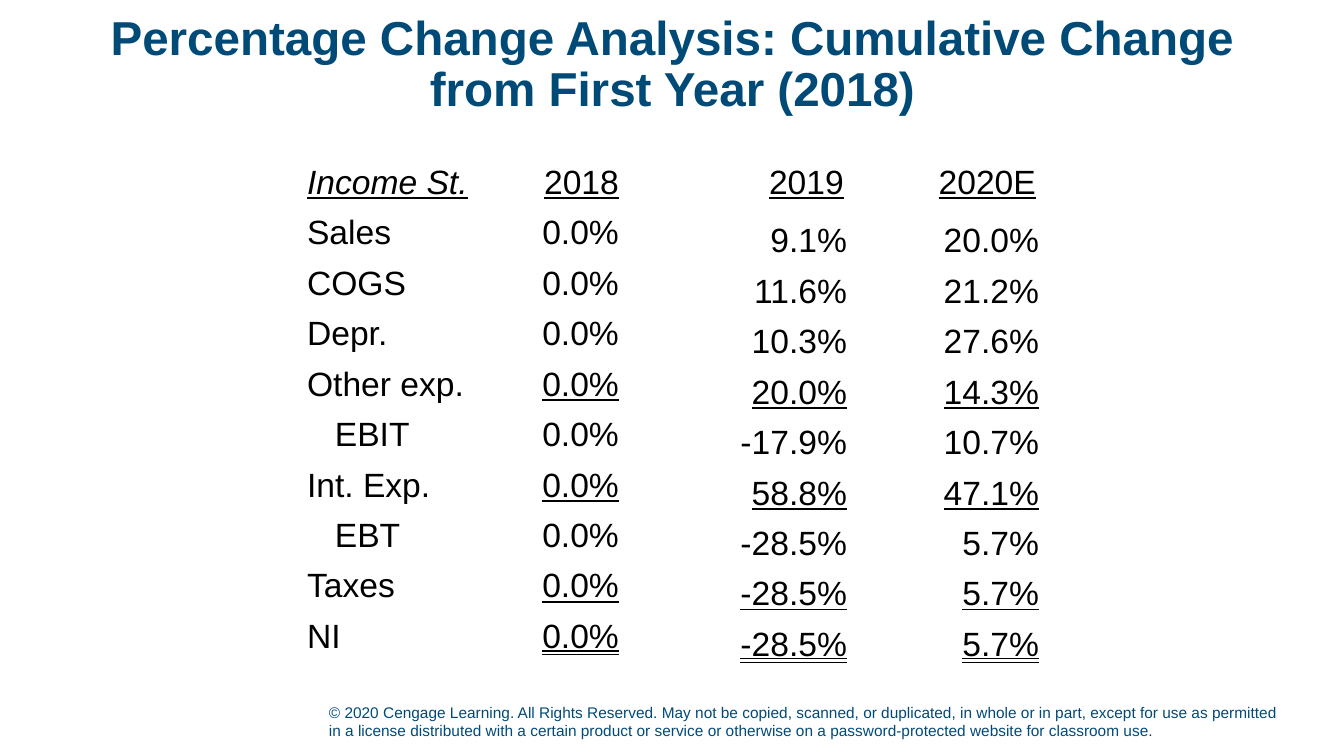
from pptx import Presentation
from pptx.dml.color import RGBColor
from pptx.enum.text import MSO_ANCHOR, MSO_UNDERLINE, PP_ALIGN
from pptx.util import Pt

LEFT, CENTER, RIGHT = PP_ALIGN.LEFT, PP_ALIGN.CENTER, PP_ALIGN.RIGHT
TOP, MIDDLE, BOTTOM = MSO_ANCHOR.TOP, MSO_ANCHOR.MIDDLE, MSO_ANCHOR.BOTTOM
NONE = MSO_UNDERLINE.NONE
SINGLE = MSO_UNDERLINE.SINGLE_LINE
DOUBLE = MSO_UNDERLINE.DOUBLE_LINE

COLORS = {"navy": "004A78", "text": "000000"}
FORMATS = {
    "title": {"size": Pt(34), "bold": True, "name": "Arial"},
    "footer": {"size": Pt(11), "bold": False, "name": "Arial"},
    "cell": {"size": Pt(24), "bold": False, "name": "Arial"},
}

TITLE = "Percentage Change Analysis: Cumulative Change from First Year (2018)"
COPYRIGHT = (
    "© 2020 Cengage Learning. All Rights Reserved. May not be copied, scanned, "
    "or duplicated, in whole or in part, except for use as permitted in a license "
    "distributed with a certain product or service or otherwise on a "
    "password-protected website for classroom use."
)
HEADINGS = ["Income St.", "2018", "2019", "2020E"]
INCOME_LINES = [
    ("Sales", "0.0%", "9.1%", "20.0%", NONE),
    ("COGS", "0.0%", "11.6%", "21.2%", NONE),
    ("Depr.", "0.0%", "10.3%", "27.6%", NONE),
    ("Other exp.", "0.0%", "20.0%", "14.3%", SINGLE),
    ("EBIT", "0.0%", "-17.9%", "10.7%", NONE),
    ("Int. Exp.", "0.0%", "58.8%", "47.1%", SINGLE),
    ("EBT", "0.0%", "-28.5%", "5.7%", NONE),
    ("Taxes", "0.0%", "-28.5%", "5.7%", SINGLE),
    ("NI", "0.0%", "-28.5%", "5.7%", DOUBLE),
]
SUBTOTALS = ("EBIT", "EBT")
COLUMN_WIDTHS = [181, 151, 225, 192]
ROW_HEIGHT = 41


def px(length):
    return round(length * 914400 / 100.8)


def write(paragraph, text, style, color, alignment, **extra):
    paragraph.alignment = alignment
    run = paragraph.add_run()
    run.text = text
    for name, value in {**FORMATS[style], **extra}.items():
        setattr(run.font, name, value)
    run.font.color.rgb = RGBColor.from_string(COLORS[color])


def add_text(slide, box, text, style, alignment, anchor, line_spacing=1.0):
    shape = slide.shapes.add_textbox(*map(px, box))
    frame = shape.text_frame
    frame.word_wrap = True
    frame.vertical_anchor = anchor
    paragraph = frame.paragraphs[0]
    paragraph.line_spacing = line_spacing
    write(paragraph, text, style, "navy", alignment)


def fill_cell(cell, text, row, column, underline):
    cell.fill.background()
    cell.vertical_anchor = TOP
    if row and column > 1:
        cell.vertical_anchor = BOTTOM
        cell.margin_left = cell.margin_right = px(7)
        cell.margin_top = cell.margin_bottom = 0
    if text in SUBTOTALS:
        cell.margin_left = px(38)
    write(cell.text_frame.paragraphs[0], text, "cell", "text",
          RIGHT if column else LEFT,
          italic=row == 0 and column == 0, underline=underline)


def add_income_table(slide, left, top):
    row_count = len(INCOME_LINES) + 1
    frame = slide.shapes.add_table(
        row_count, len(HEADINGS), px(left), px(top),
        px(sum(COLUMN_WIDTHS)), px(ROW_HEIGHT * row_count))
    table = frame.table
    table.first_row = table.horz_banding = False
    for column, width in zip(table.columns, COLUMN_WIDTHS):
        column.width = px(width)
    for column, heading in enumerate(HEADINGS):
        fill_cell(table.cell(0, column), heading, 0, column, SINGLE)
    for row, (*texts, underline) in enumerate(INCOME_LINES, 1):
        for column, text in enumerate(texts):
            fill_cell(table.cell(row, column), text, row, column,
                      underline if column else NONE)


def main():
    presentation = Presentation()
    presentation.slide_width = px(1344)
    presentation.slide_height = px(756)
    slide = presentation.slides.add_slide(presentation.slide_layouts[6])
    add_text(slide, (319, 695, 971, 50), COPYRIGHT, "footer", LEFT, BOTTOM)
    add_text(slide, (93, 15, 1159, 101), TITLE, "title", CENTER, MIDDLE, 0.9)
    add_income_table(slide, 297, 159)
    presentation.save("out.pptx")


if __name__ == "__main__":
    main()
